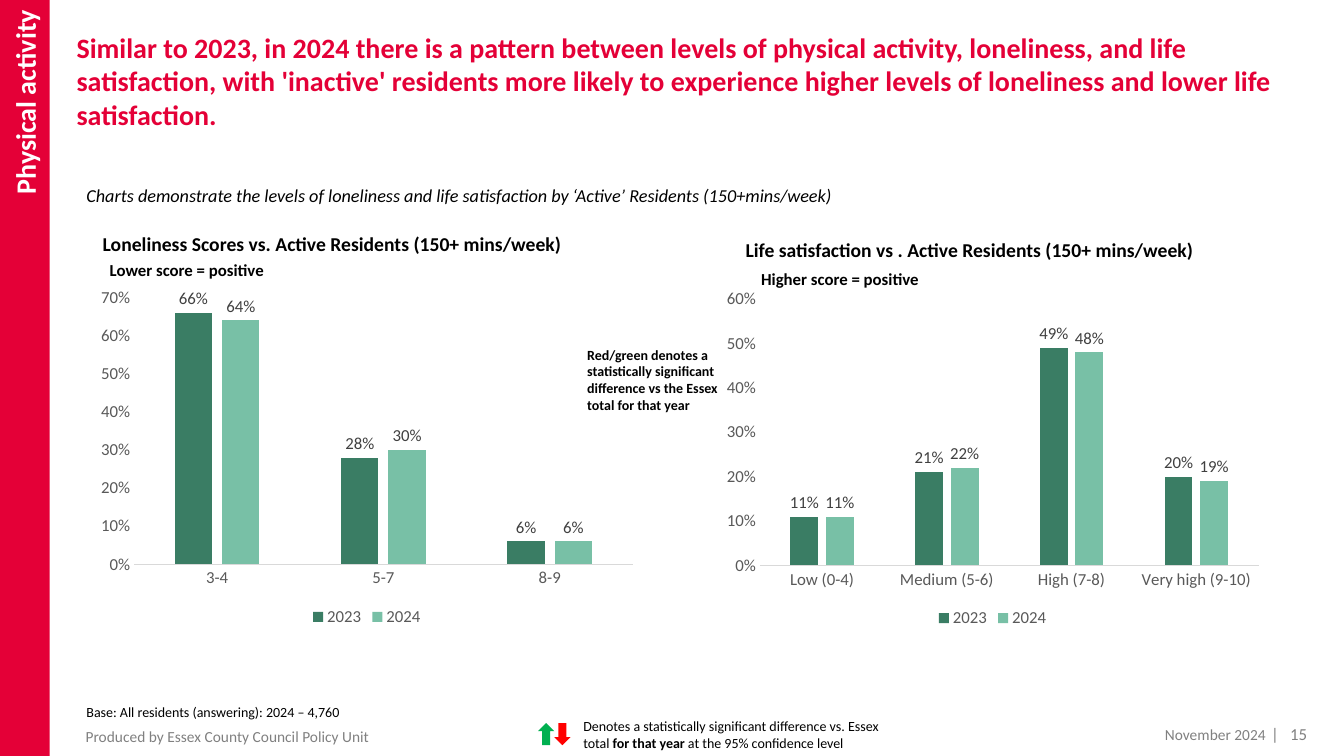
from lxml import etree
from pptx import Presentation
from pptx import util as u
from pptx.chart.data import CategoryChartData
from pptx.dml.color import RGBColor
from pptx.enum import chart as ch, shapes, text
from pptx.oxml import parse_xml
from pptx.oxml.ns import nsdecls

Cm, Pt = u.Cm, u.Pt
FONT = "Calibri"
CRIMSON = RGBColor(0xE4, 0x00, 0x37)
WHITE = RGBColor(0xFF, 0xFF, 0xFF)
BLACK = RGBColor(0, 0, 0)
GREY = RGBColor(0x80, 0x80, 0x80)
AXIS_TEXT = RGBColor(0x59, 0x59, 0x59)
LABEL_TEXT = RGBColor(0x40, 0x40, 0x40)
AXIS_LINE = RGBColor(0xD9, 0xD9, 0xD9)
YEAR_FILLS = (RGBColor(0x3A, 0x7D, 0x64), RGBColor(0x78, 0xC0, 0xA6))
ARROW_GREEN = RGBColor(0x00, 0xB0, 0x50)
RED = RGBColor(0xFF, 0, 0)
BOX_GREEN = RGBColor(0x00, 0x80, 0x3C)
BOX_COLOURS = {"g": BOX_GREEN, "r": RED}
INSETS = (0.25, 0.13, 0.25, 0.13)
FLUSH = (0, 0, 0, 0)


def set_font(font, size, color, bold=False, italic=False):
    font.name, font.size, font.bold, font.italic = FONT, Pt(size), bold, italic
    font.color.rgb = color


def write(sp, runs, size=10, color=BLACK, bold=False, italic=False,
          align=text.PP_ALIGN.LEFT, anchor=text.MSO_ANCHOR.TOP, insets=INSETS):
    tf = sp.text_frame
    tf.word_wrap = True
    tf.vertical_anchor = anchor
    tf.margin_left, tf.margin_top, tf.margin_right, tf.margin_bottom = map(Cm, insets)
    p = tf.paragraphs[0]
    p.alignment = align
    for content, strong in [(runs, bold)] if isinstance(runs, str) else runs:
        r = p.add_run()
        r.text = content
        set_font(r.font, size, color, strong, italic)
    return tf


def add_text(parent, box, runs, **fmt):
    return write(parent.shapes.add_textbox(*map(Cm, box)), runs, **fmt)


def add_solid(parent, kind, box, color):
    sp = parent.shapes.add_shape(kind, *map(Cm, box))
    sp.shadow.inherit = False
    sp.fill.solid()
    sp.fill.fore_color.rgb = color
    sp.line.fill.background()
    return sp


def sidebar(s, x, y, w, h):
    sp = add_solid(s, shapes.MSO_SHAPE.RECTANGLE, (x, y, w, h), CRIMSON)
    tf = write(sp, "Physical activity", size=20, color=WHITE, bold=True,
               align=text.PP_ALIGN.RIGHT, anchor=text.MSO_ANCHOR.MIDDLE,
               insets=(0.25, 0.25, 0.25, 0.13))
    tf._txBody.bodyPr.set("vert", "vert270")


def header(s, x, y, w):
    add_text(s, (x, y, w, 2.74),
             "Similar to 2023, in 2024 there is a pattern between levels of physical activity, "
             "loneliness, and life satisfaction, with 'inactive' residents more likely to "
             "experience higher levels of loneliness and lower life satisfaction.",
             size=20, color=CRIMSON, bold=True, insets=FLUSH)
    add_text(s, (x, y + 3.76, 25.17, 0.81),
             "Charts demonstrate the levels of loneliness and life satisfaction by "
             "‘Active’ Residents (150+mins/week)", size=13, italic=True)


def box_label(series, i, color):
    label = series.points[i].data_label
    set_font(label.font, 12, LABEL_TEXT)
    label.position = ch.XL_LABEL_POSITION.OUTSIDE_END
    d = series.data_labels._element.xpath(f'c:dLbl[c:idx/@val="{i}"]')[0]
    d.insert(1, parse_xml(f'<c:numFmt {nsdecls("c")} formatCode="0%" sourceLinked="0"/>'))
    d.insert(2, parse_xml(
        f'<c:spPr {nsdecls("c", "a")}><a:noFill/><a:ln w="19050"><a:solidFill>'
        f'<a:srgbClr val="{color}"/></a:solidFill></a:ln></c:spPr>'))


def fix_plot_area(chart, **fractions):
    area = chart._chartSpace.chart.plotArea
    for old in area.xpath("c:layout"):
        area.remove(old)
    layout = parse_xml(f'<c:layout {nsdecls("c")}><c:manualLayout/></c:layout>')
    settings = dict(layoutTarget="inner", xMode="edge", yMode="edge", **fractions)
    for tag, value in settings.items():
        item = etree.SubElement(layout[0], f"{{{layout.nsmap['c']}}}{tag}")
        item.set("val", str(value))
    area.insert(0, layout)


def column_chart(s, box, cats, years, boxes, top):
    data = CategoryChartData(number_format="0%")
    data.categories = cats
    for name, values in years.items():
        data.add_series(name, values)
    chart = s.shapes.add_chart(ch.XL_CHART_TYPE.COLUMN_CLUSTERED, *map(Cm, box), data).chart
    set_font(chart.font, 10, BLACK)
    chart.has_title = False
    chart.has_legend = True
    chart.legend.position = ch.XL_LEGEND_POSITION.BOTTOM
    chart.legend.include_in_layout = False
    set_font(chart.legend.font, 12, AXIS_TEXT)
    for axis in (chart.category_axis, chart.value_axis):
        axis.major_tick_mark = axis.minor_tick_mark = ch.XL_TICK_MARK.NONE
        axis.has_major_gridlines = False
        set_font(axis.tick_labels.font, 12, AXIS_TEXT)
    chart.category_axis.format.line.color.rgb = AXIS_LINE
    chart.category_axis.format.line.width = Pt(0.75)
    axis = chart.value_axis
    axis.format.line.fill.background()
    axis.minimum_scale, axis.maximum_scale, axis.major_unit = 0, top, 0.1
    axis.tick_labels.number_format = "0%"
    axis.tick_labels.number_format_is_linked = False
    plot = chart.plots[0]
    plot.gap_width, plot.overlap, plot.vary_by_categories = 219, -27, False
    for series, fill, marks in zip(plot.series, YEAR_FILLS, boxes):
        series.format.fill.solid()
        series.format.fill.fore_color.rgb = fill
        labels = series.data_labels
        labels.show_value = True
        labels.number_format = "0%"
        labels.number_format_is_linked = False
        labels.position = ch.XL_LABEL_POSITION.OUTSIDE_END
        set_font(labels.font, 12, LABEL_TEXT)
        for i, mark in enumerate(marks):
            if mark in BOX_COLOURS:
                box_label(series, i, BOX_COLOURS[mark])
    fix_plot_area(chart, x=0.08, y=0.05, w=0.9, h=0.76)


def chart_panel(s, x, y, heading, heading_at, note, note_at, **chart):
    column_chart(s, (x, y, 13.97, 8.84), **chart)
    add_text(s, (x + heading_at[0], y + heading_at[1], 16.03, 0.86), heading,
             size=14, bold=True)
    tf = add_text(s, (x + note_at[0], y + note_at[1], 5.26, 0.94), note, size=12,
                  bold=True, align=text.PP_ALIGN.CENTER, insets=FLUSH)
    tf.paragraphs[0].space_after = Pt(11.3)


def significance_key(s, x, y):
    g = s.shapes.add_group_shape()
    add_text(g, (x + 0.89, y, 8.15, 1.12),
             [("Denotes a statistically significant difference vs. Essex total ", False),
              ("for that year ", True), ("at the 95% confidence level", False)])
    arrows = ((shapes.MSO_SHAPE.UP_ARROW, ARROW_GREEN), (shapes.MSO_SHAPE.DOWN_ARROW, RED))
    for i, (kind, color) in enumerate(arrows):
        add_solid(g, kind, (x + 0.41 * i, y + 0.26, 0.41, 0.56), color)


def footer(s, x, y):
    middle = text.MSO_ANCHOR.MIDDLE
    add_text(s, (x, y - 0.76, 15.57, 0.69), "Base: All residents (answering): 2024 – 4,760")
    add_text(s, (x, y, 16.61, 0.38), "Produced by Essex County Council Policy Unit",
             size=11, color=GREY, anchor=middle, insets=(0.23, 0.13, 0.25, 0.13))
    for content, right, size in (("November 2024", 31.9, 11), ("|", 32.23, 12), ("15", 32.94, 12)):
        add_text(s, (right - 5, y - 0.05, 5, 0.38), content, size=size, color=GREY,
                 align=text.PP_ALIGN.RIGHT, anchor=middle, insets=(0, 0.13, 0, 0.13))
    significance_key(s, x + 11.63, y - 0.4)


def main():
    prs = Presentation()
    prs.slide_width, prs.slide_height = Cm(33.87), Cm(19.05)
    s = prs.slides.add_slide(prs.slide_layouts[6])
    sidebar(s, 0, 0, 1.25, 19.05)
    header(s, 1.93, 0.76, 31.34)
    chart_panel(s, 2.26, 7.06,
                "Loneliness Scores vs. Active Residents (150+ mins/week)", (0.08, -1.35),
                "Lower score = positive", (-0.18, -0.51),
                cats=("3-4", "5-7", "8-9"),
                years={"2023": (0.66, 0.28, 0.06), "2024": (0.64, 0.3, 0.06)},
                boxes=("grr", "g-r"), top=0.7)
    chart_panel(s, 18.03, 7.09,
                "Life satisfaction vs . Active Residents (150+ mins/week)", (0.51, -1.22),
                "Higher score = positive", (0.51, -0.33),
                cats=("Low (0-4)", "Medium (5-6)", "High (7-8)", "Very high (9-10)"),
                years={"2023": (0.11, 0.21, 0.49, 0.2), "2024": (0.11, 0.22, 0.48, 0.19)},
                boxes=("rrgg", "rggg"), top=0.6)
    add_text(s, (14.55, 8.59, 4.06, 1.96),
             "Red/green denotes a statistically significant difference vs the Essex total "
             "for that year", bold=True)
    footer(s, 1.93, 18.36)
    prs.save("out.pptx")


if __name__ == "__main__":
    main()
